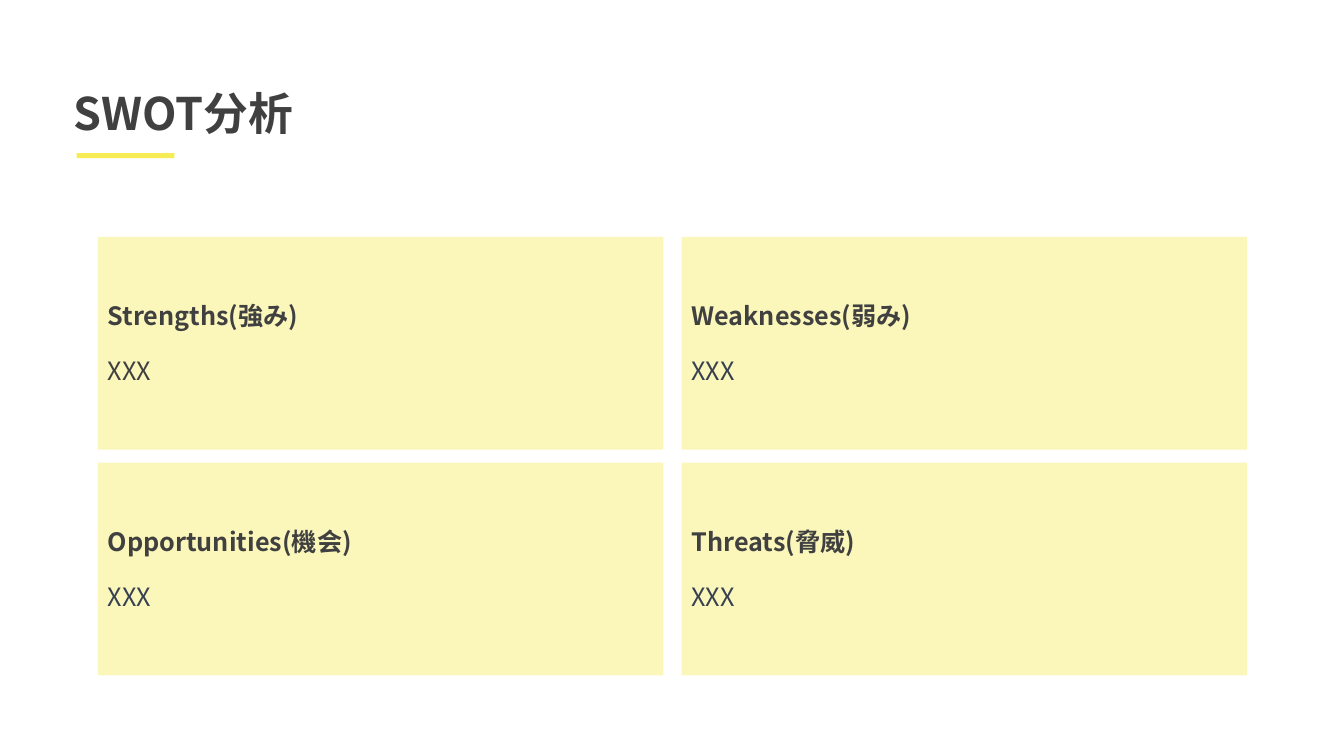
from pptx import Presentation
from pptx.dml.color import RGBColor
from pptx.enum.shapes import MSO_SHAPE
from pptx.enum.text import MSO_ANCHOR, MSO_AUTO_SIZE, PP_ALIGN
from pptx.oxml.ns import qn
from pptx.util import Inches, Pt
from lxml.etree import SubElement

FONT = "Noto Sans CJK JP"
COLORS = {
    "text": "404040",
    "slate": "374151",
    "accent": "F5EC56",
    "panel": "FBF7BB",
}
QUADRANTS = [
    ("Strengths(強み)", "XXX", "text"),
    ("Weaknesses(弱み)", "XXX", "slate"),
    ("Opportunities(機会)", "XXX", "slate"),
    ("Threats(脅威)", "XXX", "slate"),
]


def write_text(para, text, size=18, color="text", bold=False, space_before=0):
    para.alignment = PP_ALIGN.LEFT
    para.space_before = Pt(space_before)
    span = para.add_run()
    span.text = text
    span.font.name = FONT
    span.font.size = Pt(size)
    span.font.bold = bold
    span.font.color.rgb = RGBColor.from_string(COLORS[color])
    # East Asian typeface
    SubElement(span.font._element, qn("a:ea"), typeface=FONT)


def add_block(page, left, top, width, height, color):
    block = page.shapes.add_shape(
        MSO_SHAPE.RECTANGLE, Inches(left), Inches(top), Inches(width), Inches(height))
    block.shadow.inherit = False
    block.fill.solid()
    block.fill.fore_color.rgb = RGBColor.from_string(COLORS[color])
    block.line.fill.background()
    return block


def add_heading(page, text, left, top, width, height):
    title = page.shapes.title
    title.left, title.top = Inches(left), Inches(top)
    title.width, title.height = Inches(width), Inches(height)
    frame = title.text_frame
    frame.word_wrap = False
    frame.auto_size = MSO_AUTO_SIZE.NONE
    frame.vertical_anchor = MSO_ANCHOR.MIDDLE
    write_text(frame.paragraphs[0], text, size=32, bold=True)
    # Accent bar under the title
    add_block(page, left + 0.13, top + 0.72, 0.97, 0.05, "accent")


def add_quadrant(page, label, detail, detail_color, left, top, width, height):
    panel = add_block(page, left, top, width, height, "panel")
    frame = panel.text_frame
    frame.word_wrap = True
    frame.vertical_anchor = MSO_ANCHOR.MIDDLE
    write_text(frame.paragraphs[0], label, bold=True)
    write_text(frame.add_paragraph(), detail, color=detail_color, space_before=17.5)


def add_matrix(page, quadrants, left, top, width, height, gap_x=0.18, gap_y=0.13):
    panel_width = (width - gap_x) / 2
    panel_height = (height - gap_y) / 2
    for index, (label, detail, detail_color) in enumerate(quadrants):
        row, column = divmod(index, 2)
        add_quadrant(page, label, detail, detail_color,
                     left + column * (panel_width + gap_x),
                     top + row * (panel_height + gap_y),
                     panel_width, panel_height)


def main():
    deck = Presentation()
    deck.slide_width, deck.slide_height = Inches(13.33), Inches(7.5)
    page = deck.slides.add_slide(deck.slide_layouts[5])
    page.background.fill.solid()
    page.background.fill.fore_color.rgb = RGBColor.from_string("FFFFFF")
    add_heading(page, "SWOT分析", 0.63, 0.8, 2.51, 0.64)
    add_matrix(page, QUADRANTS, 0.97, 2.35, 11.4, 4.35)
    deck.save("out.pptx")


if __name__ == "__main__":
    main()
